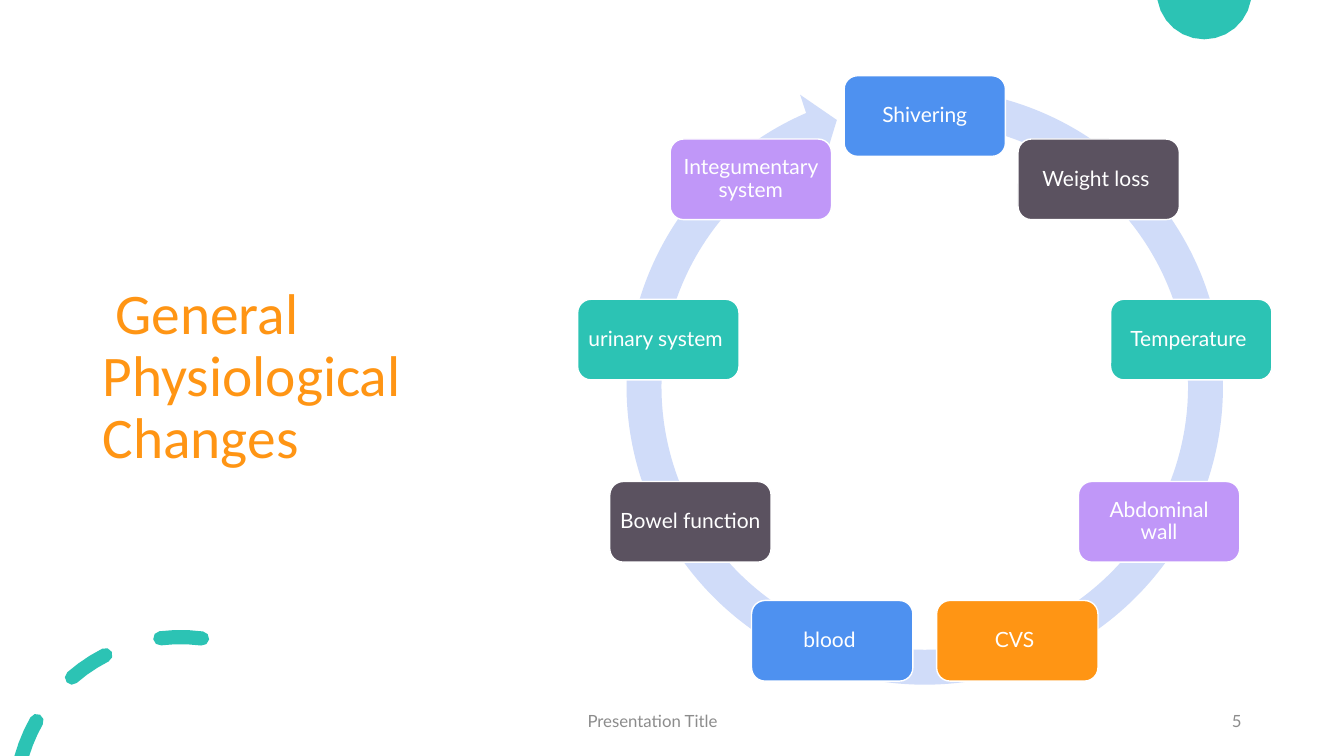
from math import acos, cos, degrees, radians, sin

from pptx import Presentation
from pptx.dml.color import RGBColor
from pptx.enum.shapes import MSO_SHAPE
from pptx.enum.text import MSO_ANCHOR, PP_ALIGN
from pptx.util import Inches, Pt

WIDTH, HEIGHT = Inches(13.33), Inches(7.5)
COLORS = {
    "blue": "4E91F0", "slate": "5B5260", "teal": "2CC3B4", "violet": "C097F8",
    "orange": "FF9514", "ring": "D0DCF9", "grey": "8C8C8C", "white": "FFFFFF",
}
SNUG, LOOSE = Inches(0.06), Inches(0.1)
STEPS = [
    ("Shivering", "blue", SNUG), ("Weight loss ", "slate", SNUG),
    ("Temperature ", "teal", SNUG), ("Abdominal wall", "violet", LOOSE),
    ("CVS ", "orange", SNUG), ("blood ", "blue", SNUG),
    ("Bowel function ", "slate", SNUG), ("urinary system  ", "teal", SNUG),
    ("Integumentary system", "violet", SNUG),
]


def color(name):
    return RGBColor.from_string(COLORS[name])


def across(share):
    return round(WIDTH * share / 100)


def down(share):
    return round(HEIGHT * share / 100)


def area(left, top, width, height):
    """Turn percentages of the slide into a box."""
    return across(left), down(top), across(width), down(height)


def paint(shape, fill):
    shape.shadow.inherit = False
    shape.fill.solid()
    shape.fill.fore_color.rgb = color(fill)
    shape.line.fill.background()


def write(frame, text, size, font, tint, align=PP_ALIGN.LEFT, spacing=None):
    frame.word_wrap = True
    frame.vertical_anchor = MSO_ANCHOR.MIDDLE
    para = frame.paragraphs[0]
    para.alignment = align
    para.line_spacing = spacing
    run = para.add_run()
    run.text = text
    run.font.size = Pt(size)
    run.font.name = font
    run.font.color.rgb = color(tint)
    return para


def arc(center, radius, start, end, count):
    """Points on a circle, in degrees clockwise from the top."""
    turns = [radians(start + (end - start) * i / count) for i in range(count + 1)]
    return [(round(center[0] + radius * sin(t)), round(center[1] - radius * cos(t)))
            for t in turns]


def outline(slide, loops, fill):
    """Draw closed loops as one filled shape."""
    builder = slide.shapes.build_freeform(*loops[0][0], scale=1.0)
    for i, (first, *rest) in enumerate(loops):
        if i:
            builder.move_to(*first)
        builder.add_line_segments(rest, close=True)
    paint(builder.convert_to_shape(), fill)


def add_dome(slide, center, radius):
    half = degrees(acos(-center[1] / radius))
    outline(slide, [arc(center, radius, 180 - half, 180 + half, 12)], "teal")


def add_dashes(slide, center, radius, cap):
    """Round-ended dashes on a circle; the first is cut by the slide's edge."""
    def edge(size):
        return -degrees(acos((center[1] - HEIGHT) / size))

    def bend(end):
        middle = arc(center, radius, end, end, 1)[0]
        return arc(middle, cap, end, end + 180, 4)[1:-1]

    def turn(start):
        middle = arc(center, radius, start, start, 1)[0]
        return arc(middle, cap, start + 180, start + 360, 4)[1:-1]

    outer, inner = radius + cap, radius - cap
    loops = [arc(center, outer, edge(outer), -60.5, 3) + bend(-60.5)
             + arc(center, inner, -60.5, edge(inner), 3)]
    for start, end in [(-41, -27), (-7, 7.5)]:
        loops.append(arc(center, outer, start, end, 3) + bend(end)
                     + arc(center, inner, end, start, 3) + turn(start))
    outline(slide, loops, "teal")


def add_title(slide, box):
    frame = slide.shapes.add_textbox(*box).text_frame
    write(frame, " General Physiological Changes", 41, "Calibri", "orange", spacing=0.9)


def add_cycle(slide, box):
    """Place the steps evenly on a ring that fills the box."""
    left, top, width, height = box
    ring = slide.shapes.add_shape(MSO_SHAPE.CIRCULAR_ARROW, *box)
    for i, value in enumerate([0.055, 3.307, 147.742, 168.036, 0.058]):
        ring.adjustments[i] = value
    paint(ring, "ring")

    center = left + width / 2, top + height / 2
    wide = round(width * 0.254)
    tall = wide // 2
    spots = arc(center, width * 0.426, 0, 360, len(STEPS))
    for (text, fill, inset), (x, y) in zip(STEPS, spots):
        node = slide.shapes.add_shape(
            MSO_SHAPE.ROUNDED_RECTANGLE,
            round(x - wide / 2), round(y - tall / 2), wide, tall)
        paint(node, fill)
        node.line.color.rgb = color("white")
        node.line.width = Pt(1)
        frame = node.text_frame
        frame.margin_left = frame.margin_right = inset
        frame.margin_top = frame.margin_bottom = SNUG
        write(frame, text, 15, "Lato", "white", PP_ALIGN.CENTER, 0.9)


def add_footer(slide, box):
    left, top, width, height = box
    parts = [
        ("Presentation Title", 0, 0.69, PP_ALIGN.LEFT),
        ("5", 0.72, 0.28, PP_ALIGN.RIGHT),
    ]
    for text, start, share, align in parts:
        label = slide.shapes.add_textbox(
            left + round(width * start), top, round(width * share), height)
        para = write(label.text_frame, text, 12, "Lato", "grey", align)
        para.space_after = Pt(6)


def main():
    deck = Presentation()
    deck.slide_width, deck.slide_height = WIDTH, HEIGHT
    slide = deck.slides.add_slide(deck.slide_layouts[6])
    add_dome(slide, (across(89.6), down(-1.07)), across(3.53))
    add_dashes(slide, (across(13.43), down(106.13)), across(12.3), across(0.53))
    add_title(slide, area(6.9, 9.33, 24.23, 81.2))
    add_cycle(slide, area(45.18, 9.14, 47.26, 84))
    add_footer(slide, area(42.98, 92.67, 50.15, 5.33))
    deck.save("out.pptx")


if __name__ == "__main__":
    main()
